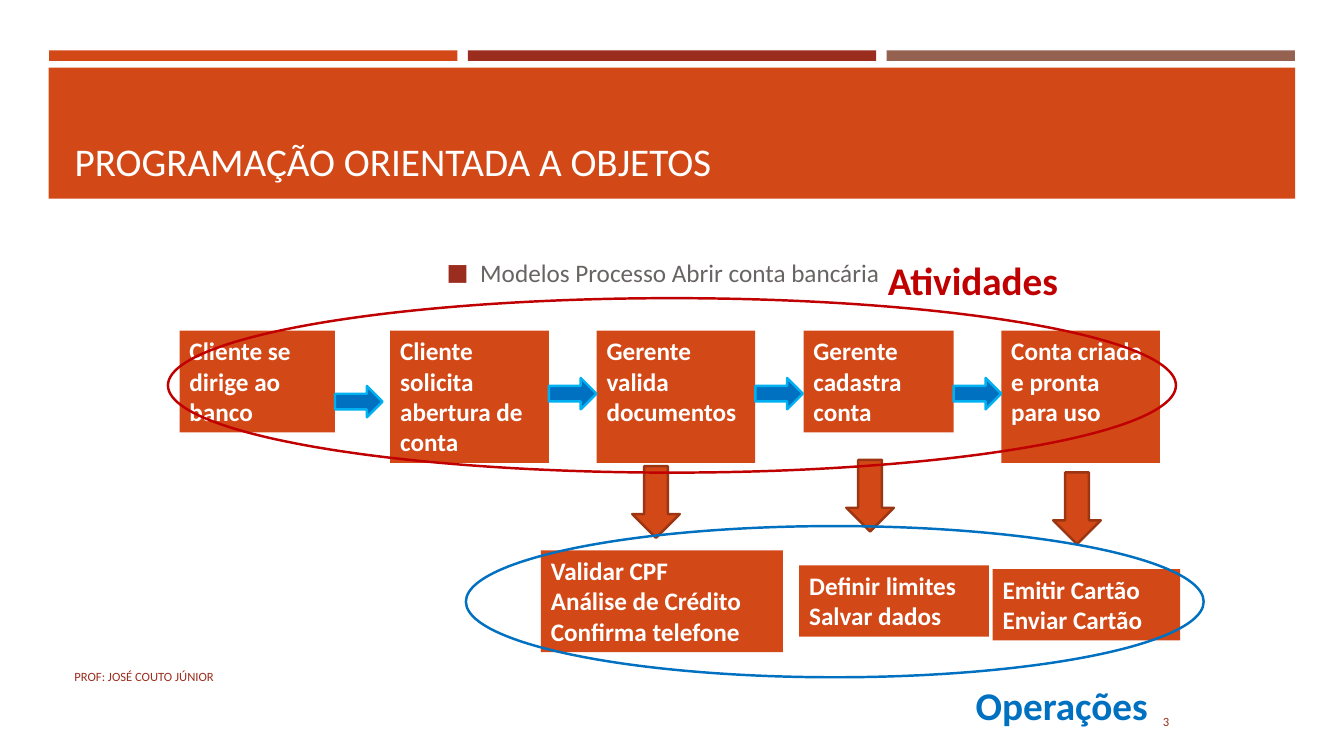
import pptx
import pptx.util
import pptx.dml.color
import pptx.enum.shapes
import pptx.enum.text
from lxml import etree

Pt = pptx.util.Pt
SHAPE = pptx.enum.shapes.MSO_SHAPE
ALIGN = pptx.enum.text.PP_ALIGN
ANCHOR = pptx.enum.text.MSO_ANCHOR

FONT = "Calibri"
ORANGE, BROWN, TAUPE, WHITE = "D34817", "9B2D1F", "956251", "FFFFFF"
RED, BLUE, SKY, RUST, GREY = "C00000", "0070C0", "00B0F0", "9C3511", "696464"

TITLE = "PROGRAMAÇÃO ORIENTADA A OBJETOS"
TOPIC = "Modelos Processo Abrir conta bancária"
STRIPES = [ORANGE, BROWN, TAUPE]
STRIPE_LEFT, STRIPE_WIDTH, STRIPE_STEP = 35.1, 291.6, 299.1
BANNER = (34.8, 48.4, 890.4, 93.6)

STEP_TOP = 236.2
STEPS = [
    (128.3, 111, 72.7, "Cliente se dirige ao banco"),
    (278.7, 113.3, 94.5, "Cliente solicita abertura de conta"),
    (426.2, 113.3, 94.5, "Gerente valida documentos"),
    (574, 107.2, 72.7, "Gerente cadastra conta"),
    (715.2, 113.3, 94.5, "Conta criada e pronta para uso"),
]
FLOW_TOPS = [275.7, 270, 270, 270]
FLOW_SIZE = (34, 22.4)

OPERATIONS = [
    ((386.4, 393.2, 172.8, 72.7), ["Validar CPF", "Análise de Crédito", "Confirma telefone"]),
    ((570.9, 403.8, 135.5, 50.9), ["Definir limites", "Salvar dados"]),
    ((709, 406.6, 134, 50.9), ["Emitir Cartão", "Enviar Cartão"]),
]
DROPS = [(451.6, 333), (604.5, 328.5), (752.3, 337.5)]
DROP_SIZE = (34, 51.2)

ACTIVITY_RING = (120, 213, 720, 124.6)
OPERATION_RING = (332.8, 375.8, 527, 108)
LABELS = [
    ((627.1, 179.3, 154.1, 41.2), "Atividades", 28, RED, True, ALIGN.LEFT, ANCHOR.TOP),
    ((689.8, 483.1, 157.7, 41.2), "Operações", 28, BLUE, True, ALIGN.LEFT, ANCHOR.TOP),
    ((811.4, 502.6, 31, 25.9), "3", 9, BROWN, False, ALIGN.RIGHT, ANCHOR.MIDDLE),
    ((46.1, 468.7, 544.3, 28.8), "PROF: JOSÉ COUTO JÚNIOR", 9, BROWN, False, ALIGN.LEFT, ANCHOR.MIDDLE),
]


def rgb(value):
    return pptx.dml.color.RGBColor.from_string(value)


def place(shape, at):
    shape.left, shape.top, shape.width, shape.height = map(Pt, at)


def write(shape, lines, size, color, bold=False, align=ALIGN.LEFT, anchor=ANCHOR.TOP):
    frame = shape.text_frame
    frame.word_wrap = True
    frame.auto_size = pptx.enum.text.MSO_AUTO_SIZE.NONE
    frame.vertical_anchor = anchor
    for index, line in enumerate(lines):
        para = frame.add_paragraph() if index else frame.paragraphs[0]
        para.alignment = align
        para.space_before = Pt(0)
        span = para.add_run()
        span.text = line
        span.font.name = FONT
        span.font.size = Pt(size)
        span.font.bold = bold
        span.font.color.rgb = rgb(color)


def draw(kind, at, fill=None, line=None):
    shape = page.shapes.add_shape(kind, *map(Pt, at))
    shape.shadow.inherit = False
    if fill:
        shape.fill.solid()
        shape.fill.fore_color.rgb = rgb(fill)
    else:
        shape.fill.background()
    if line:
        shape.line.color.rgb = rgb(line)
        shape.line.width = Pt(1.75)
    else:
        shape.line.fill.background()
    return shape


def add_bullet(para, char, color, percent, indent):
    props = para._p.get_or_add_pPr()
    props.set("marL", str(Pt(indent)))
    props.set("indent", str(-Pt(indent)))
    space = pptx.oxml.ns.qn
    tint = etree.SubElement(props, space("a:buClr"))
    etree.SubElement(tint, space("a:srgbClr"), val=color)
    etree.SubElement(props, space("a:buSzPct"), val=str(percent * 1000))
    etree.SubElement(props, space("a:buFont"), typeface=FONT)
    etree.SubElement(props, space("a:buChar"), char=char)


deck = pptx.Presentation()
deck.slide_width, deck.slide_height = Pt(960), Pt(540)
page = deck.slides.add_slide(deck.slide_layouts[1])
title, body = page.shapes.title, page.placeholders[1]

bands = [
    draw(SHAPE.RECTANGLE, (STRIPE_LEFT + i * STRIPE_STEP, 36, STRIPE_WIDTH, 7.5), color)
    for i, color in enumerate(STRIPES)
]
bands.append(draw(SHAPE.RECTANGLE, BANNER, ORANGE))
for band in bands:
    title.element.addprevious(band.element)

place(title, (46.1, 55.4, 868.3, 79.9))
write(title, [TITLE], 28, WHITE, anchor=ANCHOR.BOTTOM)
place(body, (311.8, 180, 491.8, 33.1))
add_bullet(body.text_frame.paragraphs[0], "■", BROWN, 92, 24)
write(body, [TOPIC], 18, GREY)

for left, width, height, text in STEPS:
    box = draw(SHAPE.RECTANGLE, (left, STEP_TOP, width, height), ORANGE)
    write(box, [text], 18, WHITE, True)
for (left, width, _, _), top in zip(STEPS, FLOW_TOPS):
    draw(SHAPE.RIGHT_ARROW, (left + width, top, *FLOW_SIZE), BLUE, SKY)
for at, lines in OPERATIONS:
    write(draw(SHAPE.RECTANGLE, at, ORANGE), lines, 18, WHITE, True)
for corner in DROPS:
    draw(SHAPE.DOWN_ARROW, (*corner, *DROP_SIZE), ORANGE, RUST)

draw(SHAPE.OVAL, ACTIVITY_RING, line=RED)
draw(SHAPE.OVAL, OPERATION_RING, line=BLUE)
for at, text, size, color, bold, align, anchor in LABELS:
    label = page.shapes.add_textbox(*map(Pt, at))
    write(label, [text], size, color, bold, align, anchor)

deck.save("out.pptx")
